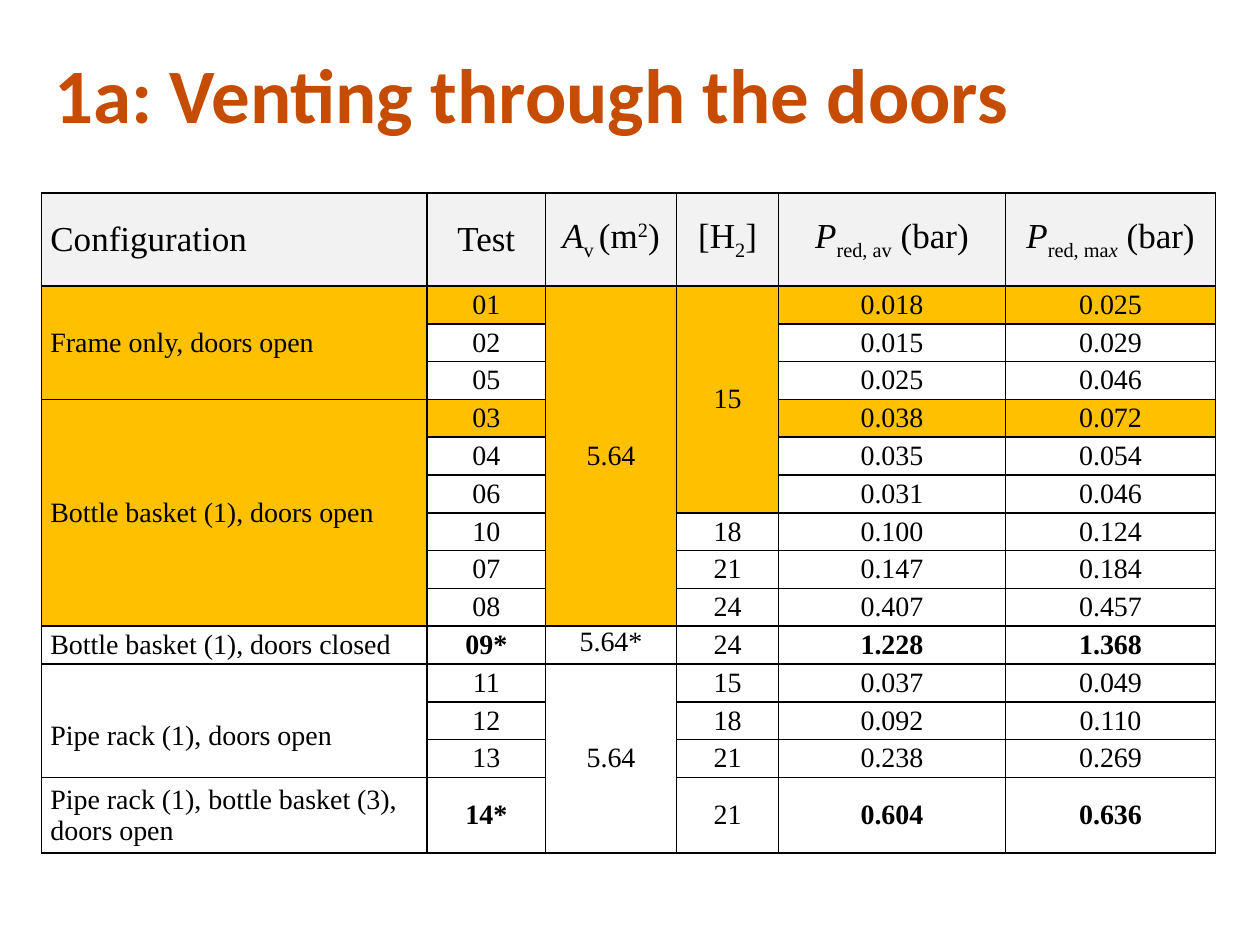
from pptx import Presentation
from pptx.dml.color import RGBColor
from pptx.enum.text import MSO_ANCHOR as Anchor, MSO_AUTO_SIZE as Fit, PP_ALIGN as Align
from pptx.util import Inches, Pt
from lxml import etree

NS = "http://schemas.openxmlformats.org/drawingml/2006/main"
WIDTHS = [3.06, 0.94, 1.04, 0.81, 1.8, 1.67]
HEIGHTS = [0.74] + [0.3] * 13 + [0.6]
BASE = {"sub": -25000, "sup": 30000}

# Each header is a list of (text, marks)
HEADS = [
    [("Configuration", "")],
    [("Test", "")],
    [("A", "i"), ("v ", "sub"), ("(m", ""), ("2", "sup"), (")", "")],
    [("[H", ""), ("2", "sub"), ("]", "")],
    [("P", "i"), ("red, av", "sub"), (" (bar)", "")],
    [("P", "i"), ("red, ma", "sub"), ("x", "i sub"), (" (bar)", "")],
]
# None continues the cell above
ROWS = [
    ("Frame only, doors open", "01", "5.64", "15", "0.018", "0.025"),
    (None, "02", None, None, "0.015", "0.029"),
    (None, "05", None, None, "0.025", "0.046"),
    ("Bottle basket (1), doors open", "03", None, None, "0.038", "0.072"),
    (None, "04", None, None, "0.035", "0.054"),
    (None, "06", None, None, "0.031", "0.046"),
    (None, "10", None, "18", "0.100", "0.124"),
    (None, "07", None, "21", "0.147", "0.184"),
    (None, "08", None, "24", "0.407", "0.457"),
    ("Bottle basket (1), doors closed", "09*", "5.64*", "24", "1.228", "1.368"),
    ("Pipe rack (1), doors open", "11", "5.64", "15", "0.037", "0.049"),
    (None, "12", None, "18", "0.092", "0.110"),
    (None, "13", None, "21", "0.238", "0.269"),
    ("Pipe rack (1), bottle basket (3), doors open", "14*", None, "21", "0.604", "0.636"),
]
MARKED = ("01", "03")


def color(code):
    return RGBColor.from_string(code)


class Deck:
    ink, gold, gray, rust = "000000", "FFC000", "F2F2F2", "C54C00"
    serif, sans = "Times New Roman", "Calibri"

    def __init__(self):
        self.prs = Presentation()
        self.prs.slide_width, self.prs.slide_height = Inches(10), Inches(7.5)
        self.slide = self.prs.slides.add_slide(self.prs.slide_layouts[5])

    def font(self, run, name, size, code, bold=False):
        run.font.name, run.font.size, run.font.bold = name, Pt(size), bold
        run.font.color.rgb = color(code)

    def title(self, text):
        box = self.slide.shapes.title
        box.left, box.top = Inches(0.33), Inches(0.4)
        box.width, box.height = Inches(9.42), Inches(1.15)
        frame = box.text_frame
        frame.text = text
        frame.auto_size, frame.vertical_anchor = Fit.NONE, Anchor.TOP
        para = frame.paragraphs[0]
        para.alignment, para.line_spacing = Align.LEFT, 0.9
        self.font(para.runs[0], self.sans, 44, self.rust, True)

    def border(self, cell):
        props = cell._tc.get_or_add_tcPr()
        for pos, side in enumerate(("lnL", "lnR", "lnT", "lnB")):
            line = etree.Element(f"{{{NS}}}{side}", w=str(Pt(1)))
            fill = etree.SubElement(line, f"{{{NS}}}solidFill")
            etree.SubElement(fill, f"{{{NS}}}srgbClr", val=self.ink)
            props.insert(pos, line)

    def cell(self, cell, parts, size, col, fill=None, bold=False, pad=0.07):
        """Fill one cell with runs given as (text, marks)."""
        cell.margin_left = cell.margin_right = Inches(pad)
        cell.margin_top = cell.margin_bottom = 0
        cell.vertical_anchor = Anchor.MIDDLE
        if fill:
            cell.fill.solid()
            cell.fill.fore_color.rgb = color(fill)
        else:
            cell.fill.background()
        self.border(cell)
        para = cell.text_frame.paragraphs[0]
        para.alignment = Align.CENTER if col else Align.LEFT
        for text, marks in parts:
            run = para.add_run()
            run.text = text
            self.font(run, self.serif, size, self.ink, bold)
            for mark in marks.split():
                if mark == "i":
                    run.font.italic = True
                else:
                    run._r.get_or_add_rPr().set("baseline", str(BASE[mark]))
        return para

    def table(self, heads, rows):
        frame = self.slide.shapes.add_table(
            len(HEIGHTS), len(WIDTHS), Inches(0.33), Inches(1.53),
            Inches(sum(WIDTHS)), Inches(sum(HEIGHTS)))
        grid = frame.table
        grid.first_row = grid.horz_banding = False
        for col, width in zip(grid.columns, WIDTHS):
            col.width = Inches(width)
        for row, height in zip(grid.rows, HEIGHTS):
            row.height = Inches(height)
        for c, parts in enumerate(heads):
            para = self.cell(grid.cell(0, c), parts, 20, c, self.gray,
                             pad=0.07 if c < 3 else 0.04)
            para.space_before = para.space_after = Pt(3)
        for r, row in enumerate(rows, 1):
            fill = self.gold if row[1] in MARKED else None
            for c, text in enumerate(row):
                bold = row[1].endswith("*") and c in (1, 4, 5)
                parts = [(text, "")] if text else []
                self.cell(grid.cell(r, c), parts, 16, c, fill, bold)
        for c in range(len(WIDTHS)):
            self.merge(grid, [row[c] for row in rows], c)
        return grid

    def merge(self, grid, texts, col):
        """Join each cell with the empty ones below it."""
        starts = [r for r, text in enumerate(texts, 1) if text]
        for top, end in zip(starts, starts[1:] + [len(texts) + 1]):
            if end - top > 1:
                grid.cell(top, col).merge(grid.cell(end - 1, col))


def main():
    deck = Deck()
    deck.title("1a: Venting through the doors")
    grid = deck.table(HEADS, ROWS)
    grid.cell(10, 2).vertical_anchor = Anchor.TOP
    grid.cell(11, 0).margin_top = Inches(0.25)
    deck.prs.save("out.pptx")


if __name__ == "__main__":
    main()
